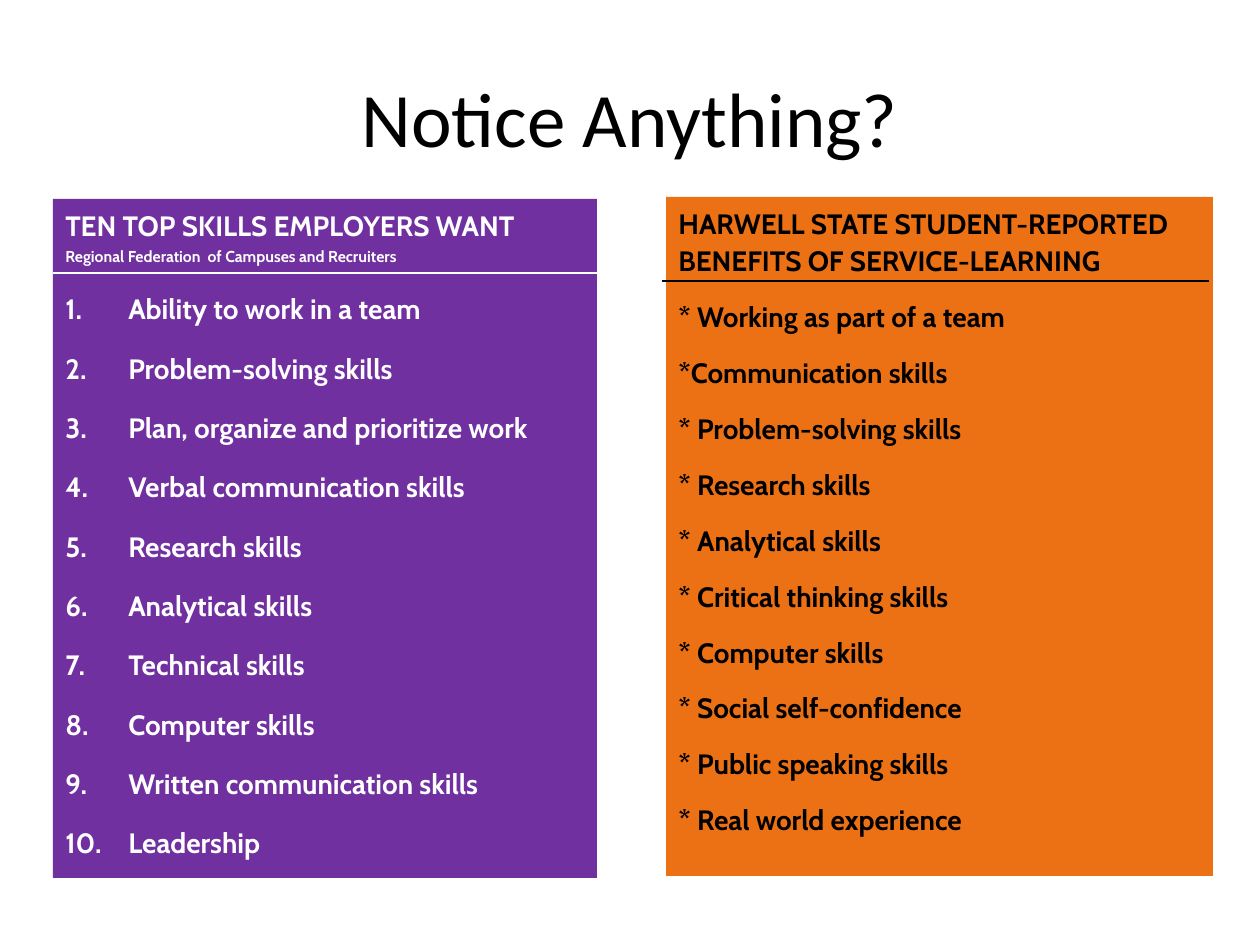
from dataclasses import dataclass

from lxml.etree import SubElement
from pptx import Presentation
from pptx.dml.color import RGBColor
from pptx.enum.shapes import MSO_CONNECTOR as Connector, MSO_SHAPE as Shape
from pptx.enum.text import MSO_ANCHOR as Anchor, PP_ALIGN as Align
from pptx.oxml.ns import qn
from pptx.util import Emu, Pt

EMU_PER_PX = 914400 / 126


@dataclass(frozen=True)
class Theme:
    purple: str = "7030A0"
    orange: str = "EC7114"
    white: str = "FFFFFF"
    black: str = "000000"
    title_font: str = "Calibri"
    body_font: str = "Cabin"
    title_size: int = 44
    body_size: int = 16
    source_size: int = 9
    rule_width: float = 0.75
    heading_spacing: float = 1.1
    space_before: float = 0.2  # share of the type size


THEME = Theme()

EMPLOYER_SKILLS = [
    "Ability to work in a team",
    "Problem-solving skills",
    "Plan, organize and prioritize work",
    "Verbal communication skills",
    "Research skills",
    "Analytical skills",
    "Technical skills",
    "Computer skills",
    "Written communication skills",
    "Leadership",
]
STUDENT_BENEFITS = [
    "* Working as part of a team",
    "*Communication skills",
    "* Problem-solving skills",
    "* Research skills",
    "* Analytical skills",
    "* Critical thinking skills",
    "* Computer skills",
    "* Social self-confidence",
    "* Public speaking skills",
    "* Real world experience",
]


def px(*lengths):
    return [Emu(round(length * EMU_PER_PX)) for length in lengths]


def style_font(font, name, size, color, bold=False):
    font.name = name
    font.size = Pt(size)
    font.bold = bold
    font.color.rgb = RGBColor.from_string(color)


def add_title(page, text, box):
    title = page.shapes.title
    title.left, title.top, title.width, title.height = px(*box)
    frame = title.text_frame
    frame.text = text
    frame.vertical_anchor = Anchor.MIDDLE
    para = frame.paragraphs[0]
    para.alignment = Align.CENTER
    style_font(para.runs[0].font, THEME.title_font, THEME.title_size, THEME.black)


def add_panel(page, box, fill):
    """Add a plain filled rectangle and return its text frame."""
    panel = page.shapes.add_shape(Shape.RECTANGLE, *px(*box))
    panel.shadow.inherit = False
    panel.fill.solid()
    panel.fill.fore_color.rgb = RGBColor.from_string(fill)
    panel.line.fill.background()
    frame = panel.text_frame
    frame.word_wrap = True
    frame.vertical_anchor = Anchor.TOP
    return frame


def number_paragraph(para, color):
    """Give the paragraph an automatic number on a hanging indent."""
    props = para._p.get_or_add_pPr()
    indent, = px(63)
    props.set("marL", str(indent))
    props.set("indent", str(-indent))
    bullet_color = SubElement(props, qn("a:buClr"))
    SubElement(bullet_color, qn("a:srgbClr"), val=color)
    SubElement(props, qn("a:buFont"), typeface="+mj-lt")
    SubElement(props, qn("a:buAutoNum"), type="arabicPeriod")


def write_lines(frame, lines, color, numbered_from=None):
    """Write (text, size, line spacing) rows, numbering those from an index on."""
    frame.text = "\n".join(text for text, _, _ in lines)
    for index, (para, (_, size, spacing)) in enumerate(zip(frame.paragraphs, lines)):
        para.alignment = Align.LEFT
        para.line_spacing = spacing
        para.space_before = Pt(size * THEME.space_before)
        style_font(para.runs[0].font, THEME.body_font, size, color, bold=True)
        if numbered_from is not None and index >= numbered_from:
            number_paragraph(para, color)


def add_rule(page, left, right, y, color):
    rule = page.shapes.add_connector(Connector.STRAIGHT, *px(left, y, right, y))
    rule.line.width = Pt(THEME.rule_width)
    rule.line.color.rgb = RGBColor.from_string(color)
    SubElement(rule._element.spPr, qn("a:effectLst"))


def body_lines(items, spacing):
    return [(item, THEME.body_size, spacing) for item in items]


def main():
    deck = Presentation()
    deck.slide_width, deck.slide_height = px(1260, 945)
    page = deck.slides.add_slide(deck.slide_layouts[5])
    add_title(page, "Notice Anything?", (63, 38, 1134, 158))

    employers = add_panel(page, (53, 199, 544, 679), THEME.purple)
    headings = [
        ("TEN TOP SKILLS EMPLOYERS WANT", THEME.body_size, THEME.heading_spacing),
        ("Regional Federation  of Campuses and Recruiters",
         THEME.source_size, THEME.heading_spacing),
    ]
    write_lines(employers, headings + body_lines(EMPLOYER_SKILLS, 1.6),
                THEME.white, numbered_from=len(headings))
    add_rule(page, 53, 597, 273, THEME.white)

    students = add_panel(page, (666, 197, 547, 679), THEME.orange)
    headings = [("HARWELL STATE STUDENT-REPORTED BENEFITS OF SERVICE-LEARNING",
                 THEME.body_size, THEME.heading_spacing)]
    write_lines(students, headings + body_lines(STUDENT_BENEFITS, 1.5), THEME.black)
    add_rule(page, 662, 1209, 281, THEME.black)

    deck.save("out.pptx")


if __name__ == "__main__":
    main()
